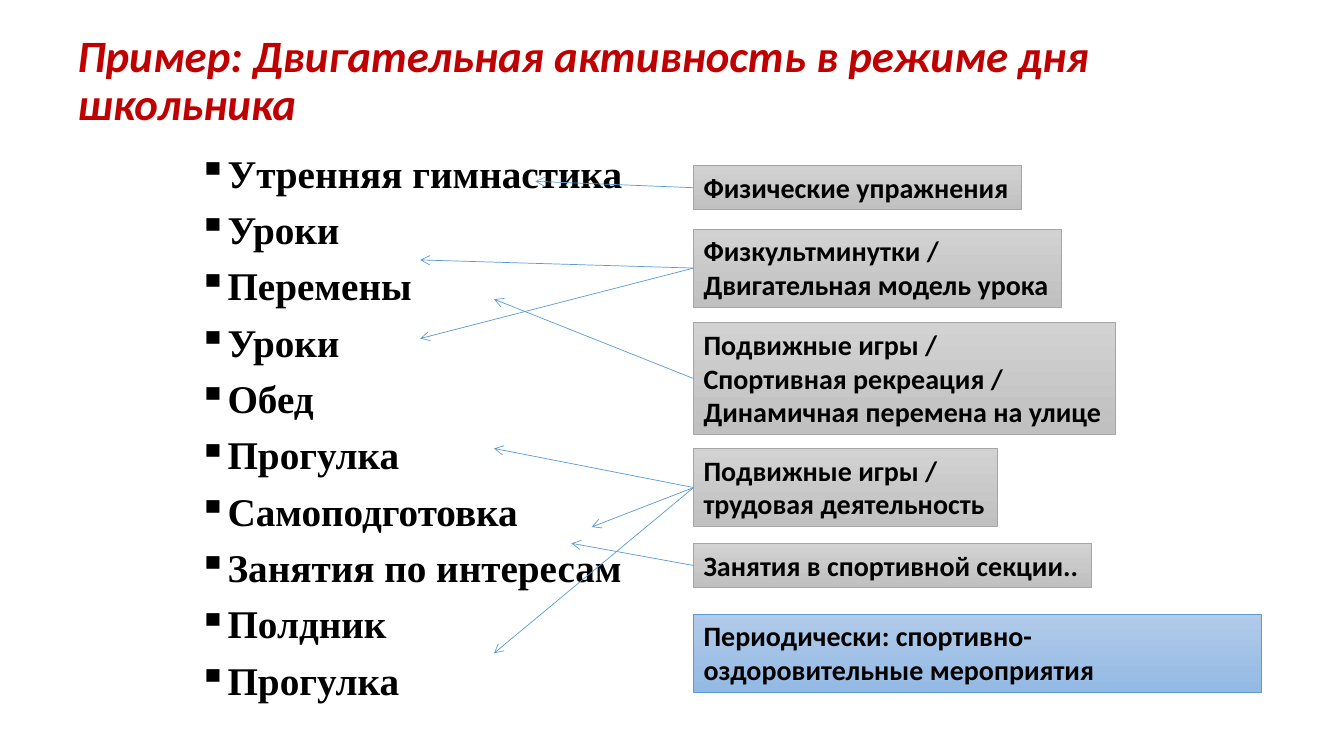
"""Build the slide on physical activity in a pupil's daily routine."""
from dataclasses import dataclass

from lxml.etree import SubElement
from pptx import Presentation
from pptx.dml.color import RGBColor
from pptx.enum.shapes import MSO_CONNECTOR, MSO_SHAPE
from pptx.enum.text import MSO_ANCHOR, MSO_AUTO_SIZE, PP_ALIGN
from pptx.oxml.ns import qn
from pptx.slide import Slide
from pptx.text.text import TextFrame
from pptx.util import Cm, Pt

RED = RGBColor(0xC0, 0x00, 0x00)
BLACK = RGBColor(0x00, 0x00, 0x00)
BLUE = RGBColor(0x5B, 0x9B, 0xD5)
GRAY = RGBColor(0xA5, 0xA5, 0xA5)
GRAY_FILL = (RGBColor(0xD2, 0xD2, 0xD2), RGBColor(0xC0, 0xC0, 0xC0))
BLUE_FILL = (RGBColor(0xB1, 0xCB, 0xE9), RGBColor(0x93, 0xB9, 0xE4))

BOX_LEFT = 17.48
TITLE = "Пример: Двигательная активность в режиме дня школьника"
ROUTINE = [
    "Утренняя гимнастика", "Уроки", "Перемены", "Уроки", "Обед", "Прогулка",
    "Самоподготовка", "Занятия по интересам", "Полдник", "Прогулка",
]


@dataclass
class Activity:
    text: str
    top: float
    width: float
    rows: int
    targets: tuple[tuple[float, float], ...] = ()
    fill: tuple[RGBColor, RGBColor] = GRAY_FILL
    line: RGBColor = GRAY
    wrap: bool = False

    @property
    def height(self) -> float:
        return 0.27 + 0.85 * self.rows


ACTIVITIES = [
    Activity("Физические упражнения", 4.17, 8.26, 1, ((13.49, 4.57),)),
    Activity("Физкультминутки /\nДвигательная модель урока", 5.77, 9.27, 2,
             ((10.59, 6.55), (10.59, 8.53))),
    Activity("Подвижные игры /\nСпортивная рекреация /\nДинамичная перемена на улице",
             8.13, 10.62, 3, ((12.45, 7.54),)),
    Activity("Подвижные игры /\nтрудовая деятельность", 11.3, 7.65, 2,
             ((12.45, 11.3), (14.91, 13.28), (12.45, 16.46))),
    Activity("Занятия в спортивной секции..", 13.69, 10.03, 1, ((14.4, 13.69),)),
    Activity("Периодически: спортивно-оздоровительные мероприятия",
             15.47, 14.3, 2, fill=BLUE_FILL, line=BLUE, wrap=True),
]


def format_text(tf: TextFrame, font: str, size: int, color: RGBColor,
                italic: bool = False) -> None:
    for p in tf.paragraphs:
        p.alignment = PP_ALIGN.LEFT
        for r in p.runs:
            r.font.name = font
            r.font.size = Pt(size)
            r.font.bold = True
            r.font.italic = italic
            r.font.color.rgb = color


def add_title(s: Slide) -> None:
    tf = s.shapes.add_textbox(Cm(1.7), Cm(0.58), Cm(30.48), Cm(2.97)).text_frame
    tf.word_wrap = True
    tf.vertical_anchor = MSO_ANCHOR.MIDDLE
    tf.text = TITLE
    tf.paragraphs[0].line_spacing = 0.9
    format_text(tf, "Calibri", 32, RED, italic=True)


def add_routine(s: Slide) -> None:
    tf = s.shapes.add_textbox(Cm(4.75), Cm(3.76), Cm(11.91), Cm(14.68)).text_frame
    tf.word_wrap = True
    tf.text = "\n".join(ROUTINE)
    format_text(tf, "Times New Roman", 28, BLACK)
    indent = Cm(0.64)
    for p in tf.paragraphs:
        p.line_spacing = 0.9
        p.space_before = Pt(10)
        pPr = p._p.get_or_add_pPr()
        pPr.set("marL", str(indent))
        pPr.set("indent", str(-indent))
        SubElement(pPr, qn("a:buChar"), char="▪")


def add_activity(s: Slide, a: Activity) -> None:
    sp = s.shapes.add_shape(MSO_SHAPE.RECTANGLE, Cm(BOX_LEFT), Cm(a.top),
                            Cm(a.width), Cm(a.height))
    sp.shadow.inherit = False
    sp.fill.gradient()
    sp.fill.gradient_angle = 270
    for stop, color in zip(sp.fill.gradient_stops, a.fill):
        stop.color.rgb = color
    sp.line.color.rgb = a.line
    sp.line.width = Pt(0.5)
    tf = sp.text_frame
    tf.word_wrap = a.wrap
    tf.auto_size = MSO_AUTO_SIZE.SHAPE_TO_FIT_TEXT
    tf.vertical_anchor = MSO_ANCHOR.TOP
    tf.text = a.text
    format_text(tf, "Calibri", 20, BLACK)


def add_arrows(s: Slide, a: Activity) -> None:
    for x, y in a.targets:
        arrow = s.shapes.add_connector(MSO_CONNECTOR.STRAIGHT, Cm(BOX_LEFT),
                                       Cm(a.top + a.height / 2), Cm(x), Cm(y))
        arrow.line.color.rgb = BLUE
        arrow.line.width = Pt(0.5)
        SubElement(arrow.line._get_or_add_ln(), qn("a:tailEnd"), type="arrow")
        SubElement(arrow._element.spPr, qn("a:effectLst"))


def main() -> None:
    prs = Presentation()
    prs.slide_width, prs.slide_height = Cm(33.87), Cm(19.05)
    s = prs.slides.add_slide(prs.slide_layouts[6])
    add_title(s)
    add_routine(s)
    for a in ACTIVITIES:
        add_activity(s, a)
    for a in ACTIVITIES:
        add_arrows(s, a)
    prs.save("out.pptx")


if __name__ == "__main__":
    main()
